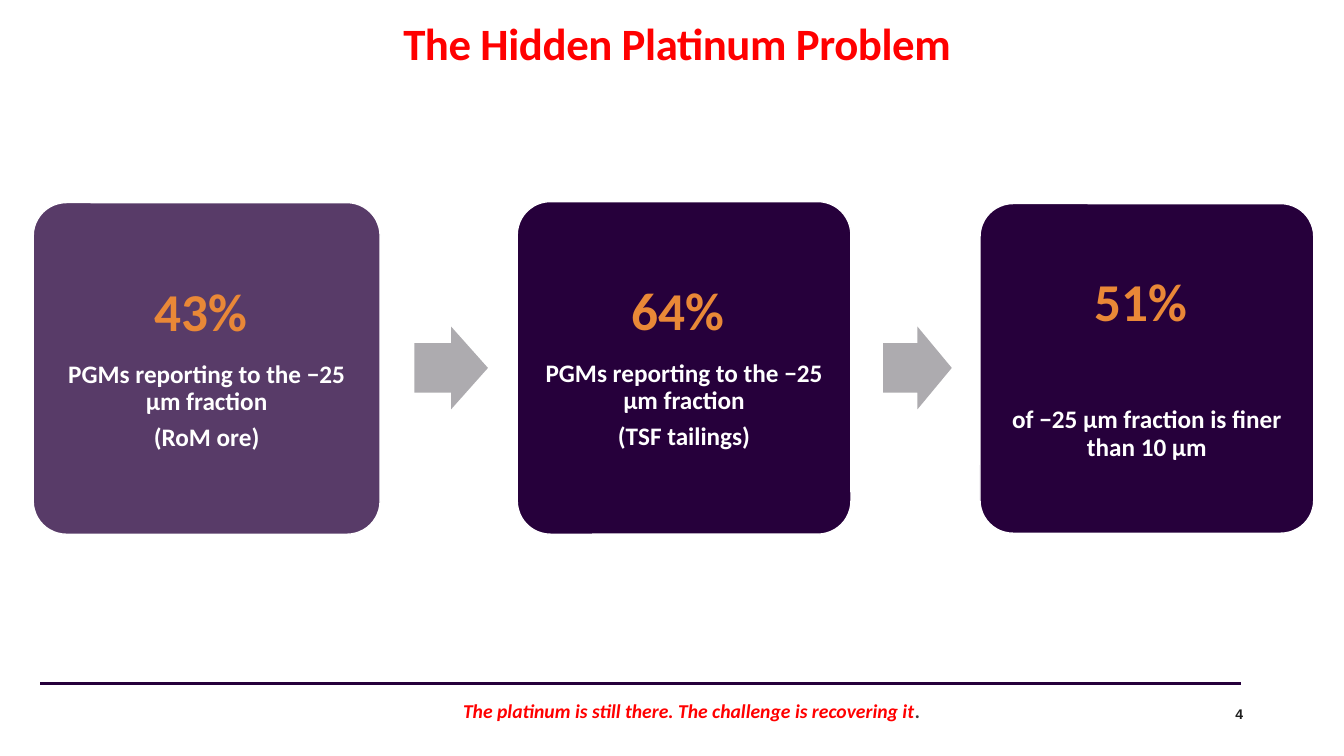
"""Build the slide on platinum hidden in the fine fractions."""
from typing import NamedTuple

from lxml.etree import SubElement
from pptx import Presentation
from pptx.dml.color import RGBColor
from pptx.enum.shapes import MSO_CONNECTOR, MSO_SHAPE
from pptx.enum.text import MSO_ANCHOR, MSO_AUTO_SIZE, PP_ALIGN
from pptx.oxml.ns import qn
from pptx.util import Inches, Pt

PURPLE = RGBColor(0x26, 0x00, 0x3B)
ORANGE = RGBColor(0xE9, 0x88, 0x37)
GREY = RGBColor(0xAD, 0xAB, 0xAF)
RED = RGBColor(0xFF, 0x00, 0x00)
WHITE = RGBColor(0xFF, 0xFF, 0xFF)
DARK = RGBColor(0x1E, 0x1E, 0x1E)
FOOTER_GREY = RGBColor(0x3C, 0x3C, 0x3C)


class Box(NamedTuple):
    left: float
    top: float
    width: float
    height: float

    def lengths(self) -> list:
        return [Inches(value) for value in self]


class Card(NamedTuple):
    box: Box
    figure: str
    captions: list[str]
    figure_gap: float = 13.3
    opacity: int = 100


CARDS = [
    Card(Box(0.33, 2.01, 3.44, 3.29), "43% ",
         ["PGMs reporting to the −25 µm fraction", "(RoM ore)"], opacity=77),
    Card(Box(5.13, 2, 3.31, 3.3), "64% ",
         ["PGMs reporting to the −25 µm fraction", "(TSF tailings)"]),
    Card(Box(9.72, 2.02, 3.31, 3.27), "51% ",
         ["of −25 µm fraction is finer than 10 µm"], figure_gap=53),
]
ARROWS = [Box(4.11, 3.24, 0.73, 0.82), Box(8.76, 3.24, 0.68, 0.82)]


def add_run(paragraph, text: str, size: float, color: RGBColor,
            name: str = "Calibri", italic: bool = False):
    run = paragraph.add_run()
    run.text = text
    run.font.name = name
    run.font.size = Pt(size)
    run.font.bold = True
    run.font.italic = italic
    run.font.color.rgb = color
    return run


def set_frame(frame, anchor, inset: float) -> None:
    frame.word_wrap = True
    frame.auto_size = MSO_AUTO_SIZE.NONE
    frame.vertical_anchor = anchor
    frame.margin_left = frame.margin_right = Inches(inset)
    frame.margin_top = frame.margin_bottom = Inches(inset)


def add_title(slide) -> None:
    title = slide.shapes.title
    title.left, title.top, title.width, title.height = Box(0.45, 0.39, 12.53, 0.79).lengths()
    set_frame(title.text_frame, MSO_ANCHOR.BOTTOM, 0)
    title.text_frame.margin_bottom = Inches(0.48)
    paragraph = title.text_frame.paragraphs[0]
    paragraph.alignment = PP_ALIGN.CENTER
    paragraph.line_spacing = 0.9
    run = add_run(paragraph, "The Hidden Platinum Problem", 32, RED)
    run.font._element.set("spc", "-30")


def add_filled_shape(slide, kind, box: Box, color: RGBColor):
    shape = slide.shapes.add_shape(kind, *box.lengths())
    shape.shadow.inherit = False
    shape.fill.solid()
    shape.fill.fore_color.rgb = color
    shape.line.fill.background()
    return shape


def add_card(slide, card: Card) -> None:
    shape = add_filled_shape(slide, MSO_SHAPE.ROUNDED_RECTANGLE, card.box, PURPLE)
    shape.adjustments[0] = 0.1
    shape.line.color.rgb = WHITE
    shape.line.width = Pt(1)
    if card.opacity < 100:
        color = shape._element.spPr.find(qn("a:solidFill"))[0]
        SubElement(color, qn("a:alpha")).set("val", str(card.opacity * 1000))

    frame = shape.text_frame
    set_frame(frame, MSO_ANCHOR.MIDDLE, 0.16)
    figure = frame.paragraphs[0]
    add_run(figure, card.figure, 38, ORANGE)
    for caption in card.captions:
        add_run(frame.add_paragraph(), caption, 18, WHITE)
    for paragraph in frame.paragraphs:
        paragraph.alignment = PP_ALIGN.CENTER
        paragraph.line_spacing = 0.9
        paragraph.space_after = Pt(6.3)
    figure.space_after = Pt(card.figure_gap)


def add_arrow(slide, box: Box) -> None:
    arrow = add_filled_shape(slide, MSO_SHAPE.RIGHT_ARROW, box, GREY)
    arrow.adjustments[0] = 0.6
    arrow.adjustments[1] = 0.5


def add_text_box(slide, box: Box, inset: float, alignment):
    frame = slide.shapes.add_textbox(*box.lengths()).text_frame
    set_frame(frame, MSO_ANCHOR.MIDDLE, inset)
    paragraph = frame.paragraphs[0]
    paragraph.alignment = alignment
    return paragraph


def add_footer(slide) -> None:
    rule = slide.shapes.add_connector(
        MSO_CONNECTOR.STRAIGHT, Inches(0.4), Inches(6.78), Inches(12.31), Inches(6.78))
    rule.line.color.rgb = PURPLE
    rule.line.width = Pt(2.25)
    SubElement(rule._element.spPr, qn("a:effectLst"))

    number = add_text_box(slide, Box(11.79, 6.96, 0.54, 0.24), 0, PP_ALIGN.RIGHT)
    add_run(number, "4", 10, DARK, "Arial")

    message = add_text_box(slide, Box(3.29, 6.88, 7.14, 0.34), 0.05, PP_ALIGN.CENTER)
    add_run(message, "The platinum is still there. The challenge is recovering it",
            14, RED, italic=True)
    add_run(message, ".", 14, FOOTER_GREY, italic=True)


def main() -> None:
    presentation = Presentation()
    presentation.slide_width = Inches(13.33)
    presentation.slide_height = Inches(7.5)
    slide = presentation.slides.add_slide(presentation.slide_layouts[5])
    add_title(slide)
    for card in CARDS:
        add_card(slide, card)
    for box in ARROWS:
        add_arrow(slide, box)
    add_footer(slide)
    presentation.save("out.pptx")


if __name__ == "__main__":
    main()
